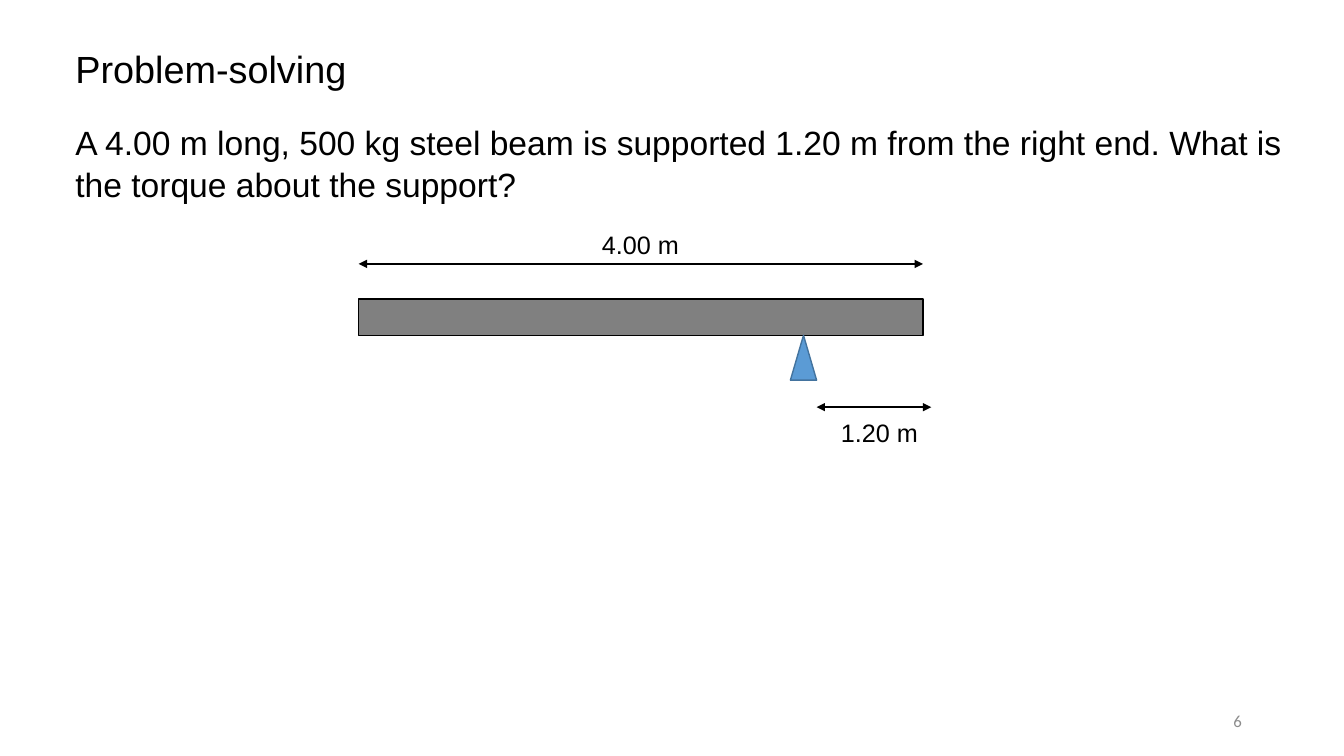
from lxml import etree
from pptx import Presentation
from pptx.dml.color import RGBColor
from pptx.enum.shapes import MSO_CONNECTOR, MSO_SHAPE
from pptx.enum.text import MSO_ANCHOR, MSO_AUTO_SIZE, PP_ALIGN
from pptx.oxml.ns import qn
from pptx.util import Cm, Pt

STRAIGHT = MSO_CONNECTOR.STRAIGHT
RECTANGLE, TRIANGLE = MSO_SHAPE.RECTANGLE, MSO_SHAPE.ISOSCELES_TRIANGLE
TOP, MIDDLE = MSO_ANCHOR.TOP, MSO_ANCHOR.MIDDLE
LEFT, CENTER, RIGHT = PP_ALIGN.LEFT, PP_ALIGN.CENTER, PP_ALIGN.RIGHT
NO_AUTOFIT = MSO_AUTO_SIZE.NONE

COLORS = {"ink": "000000", "beam": "808080", "support": "5B9BD5",
          "support_edge": "43739E", "number": "8C8C8C"}
TITLE = "Problem-solving"
QUESTION = ("A 4.00 m long, 500 kg steel beam is supported 1.20 m from the "
            "right end. What is the torque about the support?")
PAGE = "6"
MARGIN = 1.9
BEAM = (9.04, 7.54, 14.22, 0.91)
SUPPORT_X, SUPPORT_W, SUPPORT_H = 20.25, 0.66, 1.13
LABEL_W, LABEL_H = 2.46, 1.02

beam_x, beam_y, beam_w, beam_h = BEAM
support_x = SUPPORT_X - SUPPORT_W / 2
SOLIDS = [
    (RECTANGLE, BEAM, "beam", "ink"),
    (TRIANGLE, (support_x, beam_y + beam_h, SUPPORT_W, SUPPORT_H),
     "support", "support_edge"),
]
DIMENSIONS = [
    ("4.00 m", beam_x, beam_x + beam_w, 6.65, 14.91, 5.66),
    ("1.20 m", support_x + SUPPORT_W, 23.47, 10.26, 20.93, 10.39),
]


def rgb(name):
    return RGBColor.from_string(COLORS[name])


def place(shape, box):
    shape.left, shape.top, shape.width, shape.height = map(Cm, box)


def write(shape, text, size, align=LEFT, anchor=TOP, font="Arial",
          color="ink", inset=(0, 0), wrap=True):
    tf = shape.text_frame
    tf.word_wrap, tf.auto_size, tf.vertical_anchor = wrap, NO_AUTOFIT, anchor
    tf.margin_left = tf.margin_right = Cm(inset[0])
    tf.margin_top = tf.margin_bottom = Cm(inset[1])
    p = tf.paragraphs[0]
    p.alignment = align
    r = p.add_run()
    r.text = text
    r.font.size, r.font.name = Pt(size), font
    r.font.color.rgb = rgb(color)
    return p


def add_text(s, box, text, size, **style):
    return write(s.shapes.add_textbox(*map(Cm, box)), text, size, **style)


def add_solid(s, kind, box, fill, edge):
    sp = s.shapes.add_shape(kind, *map(Cm, box))
    sp.shadow.inherit = False
    sp.fill.solid()
    sp.fill.fore_color.rgb = rgb(fill)
    sp.line.color.rgb = rgb(edge)
    sp.line.width = Pt(1)


def add_dimension(s, text, x1, x2, y, label_x, label_y):
    arrow = s.shapes.add_connector(STRAIGHT, Cm(x1), Cm(y), Cm(x2), Cm(y))
    arrow.line.color.rgb = rgb("ink")
    arrow.line.width = Pt(1.5)
    ln = arrow.line._get_or_add_ln()
    for end in ("a:headEnd", "a:tailEnd"):
        etree.SubElement(ln, qn(end), type="triangle")
    etree.SubElement(arrow._element.spPr, qn("a:effectLst"))
    add_text(s, (label_x, label_y, LABEL_W, LABEL_H), text, 18,
             align=CENTER, inset=(0.25, 0.13), wrap=False)


def main():
    prs = Presentation()
    prs.slide_width, prs.slide_height = Cm(33.87), Cm(19.05)
    s = prs.slides.add_slide(prs.slide_layouts[5])

    place(s.shapes.title, (MARGIN, 1.07, 8.08, 1.3))
    write(s.shapes.title, TITLE, 27, anchor=MIDDLE)
    question = add_text(s, (MARGIN, 3.05, 31.72, 3.6), QUESTION, 24)
    question.line_spacing = 1.03

    for solid in SOLIDS:
        add_solid(s, *solid)
    for dimension in DIMENSIONS:
        add_dimension(s, *dimension)

    add_text(s, (23.93, 17.65, 7.62, 1.02), PAGE, 12, align=RIGHT,
             anchor=MIDDLE, font="Calibri", color="number", inset=(0.25, 0.13))
    prs.save("out.pptx")


if __name__ == "__main__":
    main()
